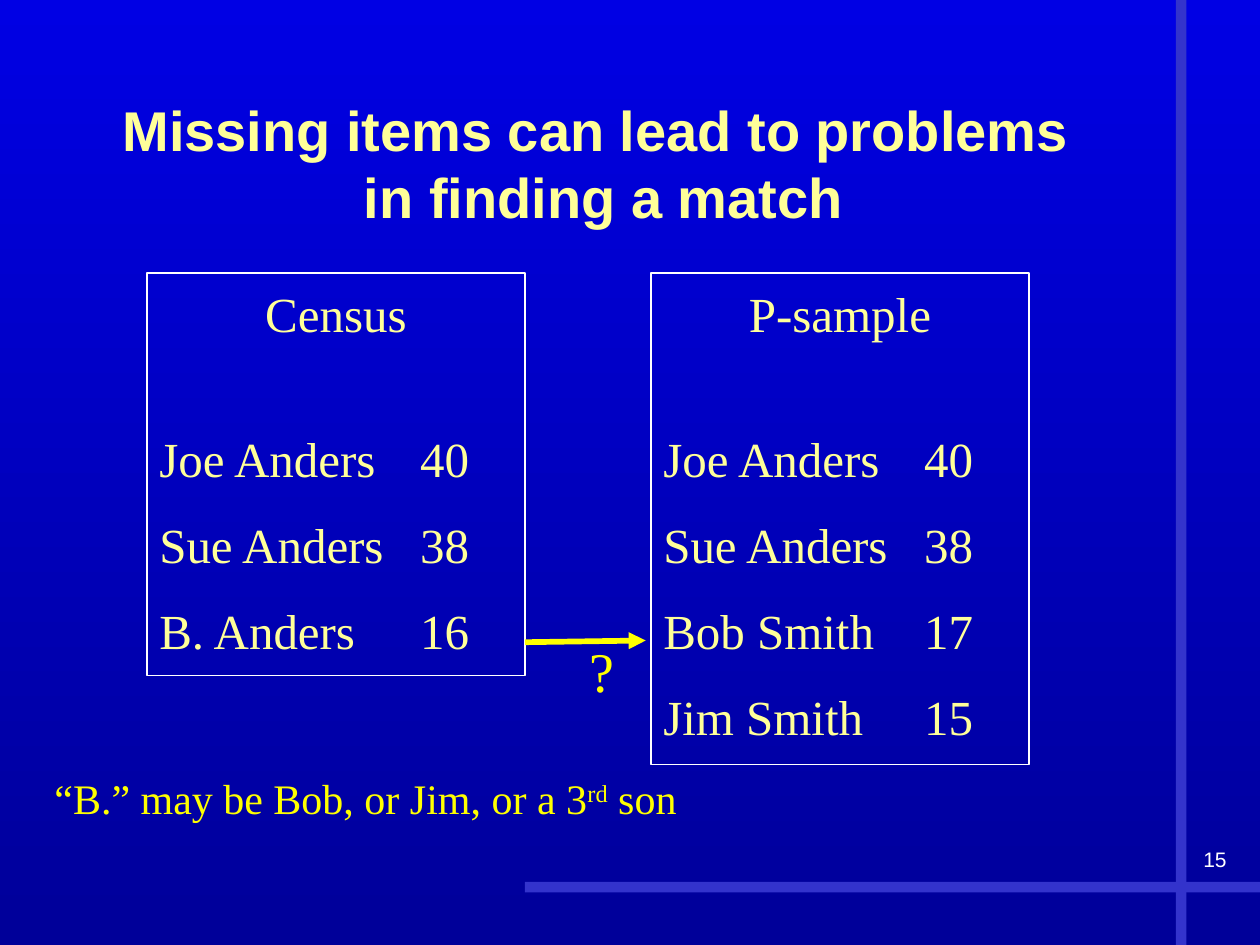
from lxml import etree
from pptx import Presentation
from pptx.dml.color import RGBColor
from pptx.enum.shapes import MSO_CONNECTOR, MSO_SHAPE
from pptx.enum.text import MSO_ANCHOR, PP_ALIGN
from pptx.oxml.ns import qn
from pptx.util import Pt

RECTANGLE = MSO_SHAPE.RECTANGLE
STRAIGHT = MSO_CONNECTOR.STRAIGHT
TOP, MIDDLE = MSO_ANCHOR.TOP, MSO_ANCHOR.MIDDLE
LEFT, CENTER, RIGHT = PP_ALIGN.LEFT, PP_ALIGN.CENTER, PP_ALIGN.RIGHT

BLUE_TOP = RGBColor(0x00, 0x00, 0xE4)
BLUE_BOTTOM = RGBColor(0x00, 0x00, 0x99)
BAR_BLUE = RGBColor(0x33, 0x33, 0xCC)
CREAM = RGBColor(0xFF, 0xFF, 0x99)
YELLOW = RGBColor(0xFF, 0xFF, 0x00)
WHITE = RGBColor(0xFF, 0xFF, 0xFF)
SERIF, SANS = "Times New Roman", "Arial"


def set_font(paragraph, name, size, color, bold=False):
    font = paragraph.font
    font.name, font.size, font.bold = name, Pt(size), bold
    font.color.rgb = color


def add_text(left, top, width, height, text, name, size, color, align=LEFT):
    frame = slide.shapes.add_textbox(Pt(left), Pt(top), Pt(width), Pt(height)).text_frame
    frame.word_wrap = True
    paragraph = frame.paragraphs[0]
    paragraph.text = text
    paragraph.alignment = align
    set_font(paragraph, name, size, color)
    return paragraph


prs = Presentation()
prs.slide_width, prs.slide_height = Pt(720), Pt(540)
slide = prs.slides.add_slide(prs.slide_layouts[5])

# Background gradient
background = slide.background.fill
background.gradient()
background.gradient_angle = 270
for stop, color in zip(background.gradient_stops, (BLUE_TOP, BLUE_BOTTOM)):
    stop.color.rgb = color

# Crossing bars and page number
for left, top, width, height in ((300, 504, 420, 6), (672, 0, 6, 540)):
    bar = slide.shapes.add_shape(RECTANGLE, Pt(left), Pt(top), Pt(width), Pt(height))
    bar.shadow.inherit = False
    bar.fill.solid()
    bar.fill.fore_color.rgb = BAR_BLUE
    bar.line.fill.background()
add_text(558, 480, 150, 36, "15", SANS, 12, WHITE, RIGHT)

# Title
title = slide.shapes.title
title.left, title.top, title.width, title.height = Pt(42), Pt(48), Pt(606), Pt(90)
title.text_frame.vertical_anchor = MIDDLE
heading = title.text_frame.paragraphs[0]
heading.text = "Missing items can lead to problems \vin finding a match"
heading.alignment = CENTER
set_font(heading, SANS, 32, CREAM, bold=True)

# Household lists: name, tab, age
households = (
    (84, 230, "Census", (("Joe Anders", 40), ("Sue Anders", 38), ("B. Anders", 16))),
    (372, 281, "P-sample", (("Joe Anders", 40), ("Sue Anders", 38),
                            ("Bob Smith", 17), ("Jim Smith", 15))),
)
for left, height, source, people in households:
    box = slide.shapes.add_shape(RECTANGLE, Pt(left), Pt(156), Pt(216), Pt(height))
    box.shadow.inherit = False
    box.fill.background()
    box.line.color.rgb = WHITE
    box.line.width = Pt(0.75)
    frame = box.text_frame
    frame.vertical_anchor = TOP
    frame.margin_top = Pt(6)
    label = frame.paragraphs[0]
    label.text = source
    label.alignment = CENTER
    set_font(label, SERIF, 28, CREAM)
    for row, (person, age) in enumerate(people):
        entry = frame.add_paragraph()
        entry.text = f"{person}\t{age}"
        entry.alignment = LEFT
        entry.space_before = Pt(15.4 if row else 49.5)
        tabs = etree.SubElement(entry._p.get_or_add_pPr(), qn("a:tabLst"))
        etree.SubElement(tabs, qn("a:tab"), pos=str(Pt(149)), algn="l")
        set_font(entry, SERIF, 28, CREAM)

# Arrow for the uncertain match
arrow = slide.shapes.add_connector(STRAIGHT, Pt(300), Pt(367), Pt(369), Pt(366))
arrow.line.color.rgb = YELLOW
arrow.line.width = Pt(3.25)
etree.SubElement(arrow.line._get_or_add_ln(), qn("a:tailEnd"), type="triangle")
etree.SubElement(arrow._element.spPr, qn("a:effectLst"))
add_text(330, 360, 32, 45, "?", SERIF, 32, YELLOW)

# Closing remark
remark = add_text(24, 438, 375, 36, "“B.” may be Bob, or Jim, or a 3", SERIF, 24, YELLOW)
ordinal = remark.add_run()
ordinal.text = "rd"
ordinal._r.get_or_add_rPr().set("baseline", "30000")
remark.add_run().text = " son"

prs.save("out.pptx")
